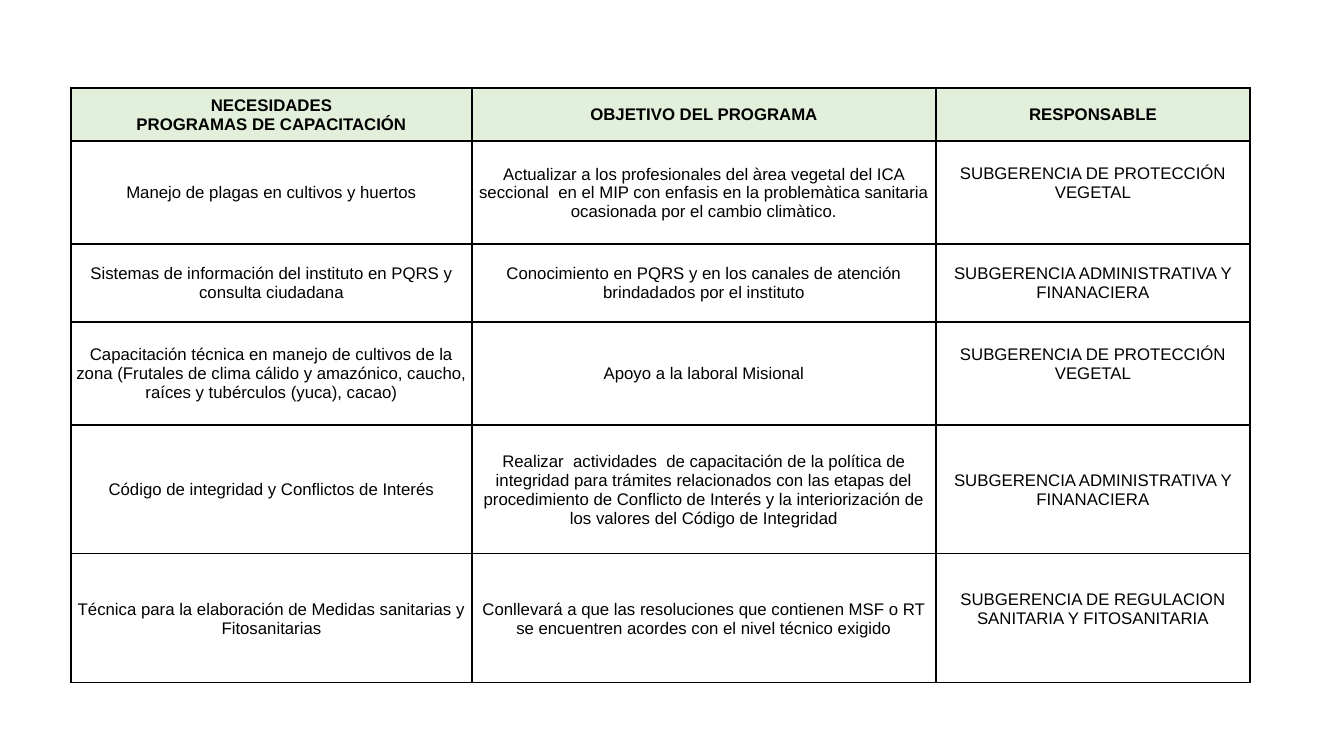
"""Build a slide with the table of training needs, objectives and owners."""
from lxml import etree
from pptx import Presentation
from pptx import util as u
from pptx.dml.color import RGBColor
from pptx.enum import text
from pptx.oxml.ns import qn

HEADER = (
    "NECESIDADES\vPROGRAMAS DE CAPACITACIÓN",
    "OBJETIVO DEL PROGRAMA",
    "RESPONSABLE",
)
PLANT = "SUBGERENCIA DE PROTECCIÓN VEGETAL"
FINANCE = "SUBGERENCIA ADMINISTRATIVA Y FINANACIERA"
REGULATION = "SUBGERENCIA DE REGULACION SANITARIA Y FITOSANITARIA"
PROGRAMS = [
    (
        "Manejo de plagas en cultivos y huertos",
        "Actualizar a los profesionales del àrea vegetal del ICA seccional  en el MIP "
        "con enfasis en la problemàtica sanitaria ocasionada por el cambio climàtico.",
        PLANT,
    ),
    (
        "Sistemas de información del instituto en PQRS y consulta ciudadana",
        "Conocimiento en PQRS y en los canales de atención brindadados por el instituto",
        FINANCE,
    ),
    (
        "Capacitación técnica en manejo de cultivos de la zona (Frutales de clima cálido "
        "y amazónico, caucho, raíces y tubérculos (yuca), cacao)",
        "Apoyo a la laboral Misional",
        PLANT,
    ),
    (
        "Código de integridad y Conflictos de Interés",
        "Realizar  actividades  de capacitación de la política de integridad para "
        "trámites relacionados con las etapas del procedimiento de Conflicto de Interés "
        "y la interiorización de los valores del Código de Integridad",
        FINANCE,
    ),
    (
        "Técnica para la elaboración de Medidas sanitarias y Fitosanitarias",
        "Conllevará a que las resoluciones que contienen MSF o RT se encuentren acordes "
        "con el nivel técnico exigido",
        REGULATION,
    ),
]
RAISED = (PLANT, REGULATION)
COLUMN_WIDTHS = (401, 464, 314)
ROW_HEIGHTS = (53, 103, 78, 103, 129, 129)
TABLE_LEFT, TABLE_TOP = 71, 88
TEXT_LINE = 19
BLACK, HEADER_GREEN = "000000", "E2EFDA"


def px(length):
    """Turn pixels into EMU."""
    return u.Emu(round(length * 914400 / 100.8))


def color(value):
    """Turn a hex string into a colour."""
    return RGBColor.from_string(value)


def add_borders(cell):
    """Draw a thin black line on each side of a cell."""
    properties = cell._tc.get_or_add_tcPr()
    for index, side in enumerate(("lnL", "lnR", "lnT", "lnB")):
        line = etree.Element(qn(f"a:{side}"), w=str(u.Pt(1)))
        fill = etree.SubElement(line, qn("a:solidFill"))
        etree.SubElement(fill, qn("a:srgbClr"), val=BLACK)
        properties.insert(index, line)


def fill_cell(cell, wording, is_header):
    """Write and format one cell."""
    cell.margin_left = cell.margin_right = cell.margin_top = px(1)
    cell.margin_bottom = px(TEXT_LINE if wording in RAISED else 0)
    cell.vertical_anchor = text.MSO_ANCHOR.MIDDLE
    cell.text_frame.text = wording
    paragraph = cell.text_frame.paragraphs[0]
    paragraph.alignment = text.PP_ALIGN.CENTER
    font = paragraph.font
    font.name, font.size, font.bold = "Arial", u.Pt(12), is_header
    font.color.rgb = color(BLACK)
    if is_header:
        cell.fill.solid()
        cell.fill.fore_color.rgb = color(HEADER_GREEN)
    else:
        cell.fill.background()
    add_borders(cell)


def main():
    """Build and save the presentation."""
    presentation = Presentation()
    presentation.slide_width, presentation.slide_height = px(1344), px(756)
    slide = presentation.slides.add_slide(presentation.slide_layouts[6])
    rows = [HEADER, *PROGRAMS]
    table = slide.shapes.add_table(
        len(rows), len(HEADER), px(TABLE_LEFT), px(TABLE_TOP),
        px(sum(COLUMN_WIDTHS)), px(sum(ROW_HEIGHTS)),
    ).table
    table.horz_banding = False
    for column, width in zip(table.columns, COLUMN_WIDTHS):
        column.width = px(width)
    for row, height in zip(table.rows, ROW_HEIGHTS):
        row.height = px(height)
    for row_index, row in enumerate(rows):
        for column_index, wording in enumerate(row):
            fill_cell(table.cell(row_index, column_index), wording, row_index == 0)
    presentation.save("out.pptx")


if __name__ == "__main__":
    main()
